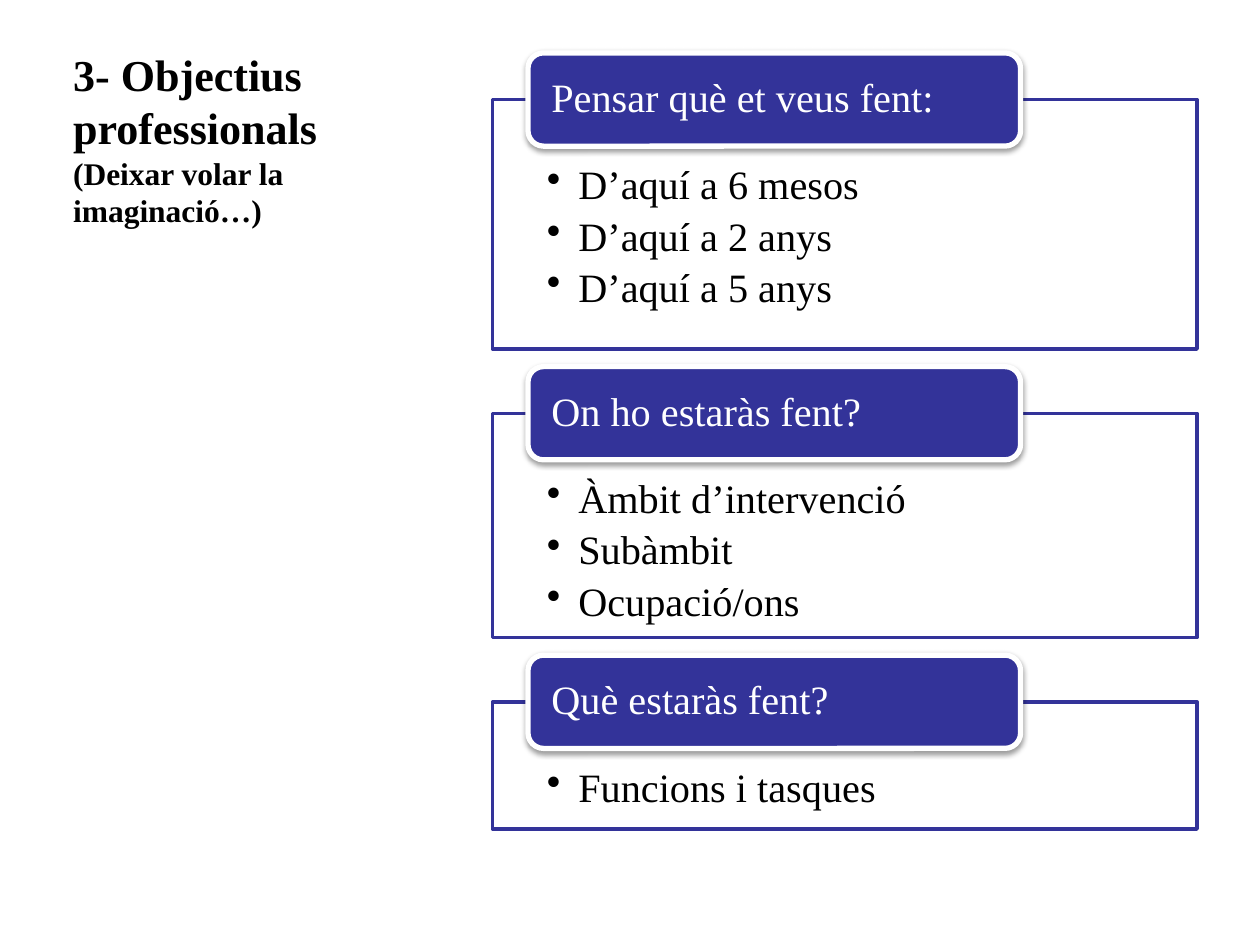
"""Builds the slide on professional objectives with three headed panels."""
import dataclasses

import lxml.etree
import pptx
import pptx.dml.color
import pptx.enum.shapes
import pptx.enum.text
import pptx.oxml
import pptx.oxml.ns
import pptx.util

Inches = pptx.util.Inches
Pt = pptx.util.Pt
qn = pptx.oxml.ns.qn
Shape = pptx.enum.shapes.MSO_SHAPE
Anchor = pptx.enum.text.MSO_ANCHOR


@dataclasses.dataclass(frozen=True)
class Theme:
    font: str = "Times New Roman"
    accent: str = "333399"
    paper: str = "FFFFFF"
    ink: str = "000000"
    title_size: float = 25.2
    subtitle_size: float = 18
    body_size: float = 23


THEME = Theme()
SECTIONS = [
    ("Pensar què et veus fent:", 1.98,
     ["D’aquí a 6 mesos", "D’aquí a 2 anys", "D’aquí a 5 anys"]),
    ("On ho estaràs fent?", 1.78,
     ["Àmbit d’intervenció", "Subàmbit", "Ocupació/ons"]),
    ("Què estaràs fent?", 1.01, ["Funcions i tasques"]),
]
FIRST_PANEL_TOP = 0.79
PANEL_GAP = 0.51
HEADING_RISE = 0.37


def rgb(value):
    return pptx.dml.color.RGBColor.from_string(value)


def write(paragraph, text, size=THEME.body_size, color=THEME.ink, bold=False,
          line_spacing=0.9, space_after=0, bullet=False):
    """Adds a formatted run to a left-aligned paragraph."""
    paragraph.alignment = pptx.enum.text.PP_ALIGN.LEFT
    paragraph.line_spacing = line_spacing
    paragraph.space_after = Pt(space_after)
    run = paragraph.add_run()
    run.text = text
    run.font.name = THEME.font
    run.font.size = Pt(size)
    run.font.bold = bold
    run.font.color.rgb = rgb(color)
    if bullet:
        properties = paragraph._p.get_or_add_pPr()
        properties.set("marL", str(Inches(0.25)))
        properties.set("indent", str(-Inches(0.25)))
        lxml.etree.SubElement(properties, qn("a:buChar"), char="•")


def set_frame(frame, anchor, side, top, bottom):
    frame.word_wrap = True
    frame.auto_size = pptx.enum.text.MSO_AUTO_SIZE.NONE
    frame.vertical_anchor = anchor
    frame.margin_left = frame.margin_right = Inches(side)
    frame.margin_top, frame.margin_bottom = Inches(top), Inches(bottom)


def add_block(slide, preset, left, top, width, height, fill, line, weight):
    block = slide.shapes.add_shape(
        preset, Inches(left), Inches(top), Inches(width), Inches(height))
    block.fill.solid()
    block.fill.fore_color.rgb = rgb(fill)
    block.line.color.rgb = rgb(line)
    block.line.width = Pt(weight)
    block.shadow.inherit = False
    return block


def add_soft_shadow(block):
    effects = block._element.spPr.find(qn("a:effectLst"))
    shadow = lxml.etree.SubElement(
        effects, qn("a:outerShdw"), blurRad=str(Pt(3.1)), dist=str(Pt(1.6)),
        dir="5400000", rotWithShape="0")
    color = lxml.etree.SubElement(shadow, qn("a:srgbClr"), val=THEME.ink)
    lxml.etree.SubElement(color, qn("a:alpha"), val="38000")


def add_title(slide):
    title = slide.shapes.title
    title.left, title.top = Inches(0.48), Inches(0.6)
    title.width, title.height = Inches(3.29), Inches(1.27)
    set_frame(title.text_frame, Anchor.BOTTOM, 0.1, 0.05, 0.05)
    paragraph = title.text_frame.paragraphs[0]
    write(paragraph, "3- Objectius professionals", size=THEME.title_size,
          bold=True, line_spacing=1.0)
    paragraph.add_line_break()
    write(paragraph, "(Deixar volar la imaginació…)",
          size=THEME.subtitle_size, bold=True, line_spacing=1.0)


def add_panel(slide, top, height, items):
    panel = add_block(slide, Shape.RECTANGLE, 3.91, top, 5.59, height,
                      THEME.paper, THEME.accent, 2)
    fill_color = panel._element.spPr.find(qn("a:solidFill"))[0]
    lxml.etree.SubElement(fill_color, qn("a:alpha"), val="90000")
    frame = panel.text_frame
    set_frame(frame, Anchor.TOP, 0.43, 0.52, 0.18)
    for index, item in enumerate(items):
        paragraph = frame.add_paragraph() if index else frame.paragraphs[0]
        write(paragraph, item, space_after=4.5, bullet=True)


def add_heading(slide, top, text):
    heading = add_block(slide, Shape.ROUNDED_RECTANGLE, 4.19, top, 3.91, 0.74,
                        THEME.accent, THEME.paper, 3)
    add_soft_shadow(heading)
    set_frame(heading.text_frame, Anchor.MIDDLE, 0.15, 0, 0)
    write(heading.text_frame.paragraphs[0], text, color=THEME.paper)


def main():
    deck = pptx.Presentation()
    deck.slide_width, deck.slide_height = Inches(10), Inches(7.5)
    slide = deck.slides.add_slide(deck.slide_layouts[5])
    add_title(slide)
    top = FIRST_PANEL_TOP
    for heading, height, items in SECTIONS:
        add_panel(slide, top, height, items)
        add_heading(slide, top - HEADING_RISE, heading)
        top += height + PANEL_GAP
    deck.save("out.pptx")


if __name__ == "__main__":
    main()
